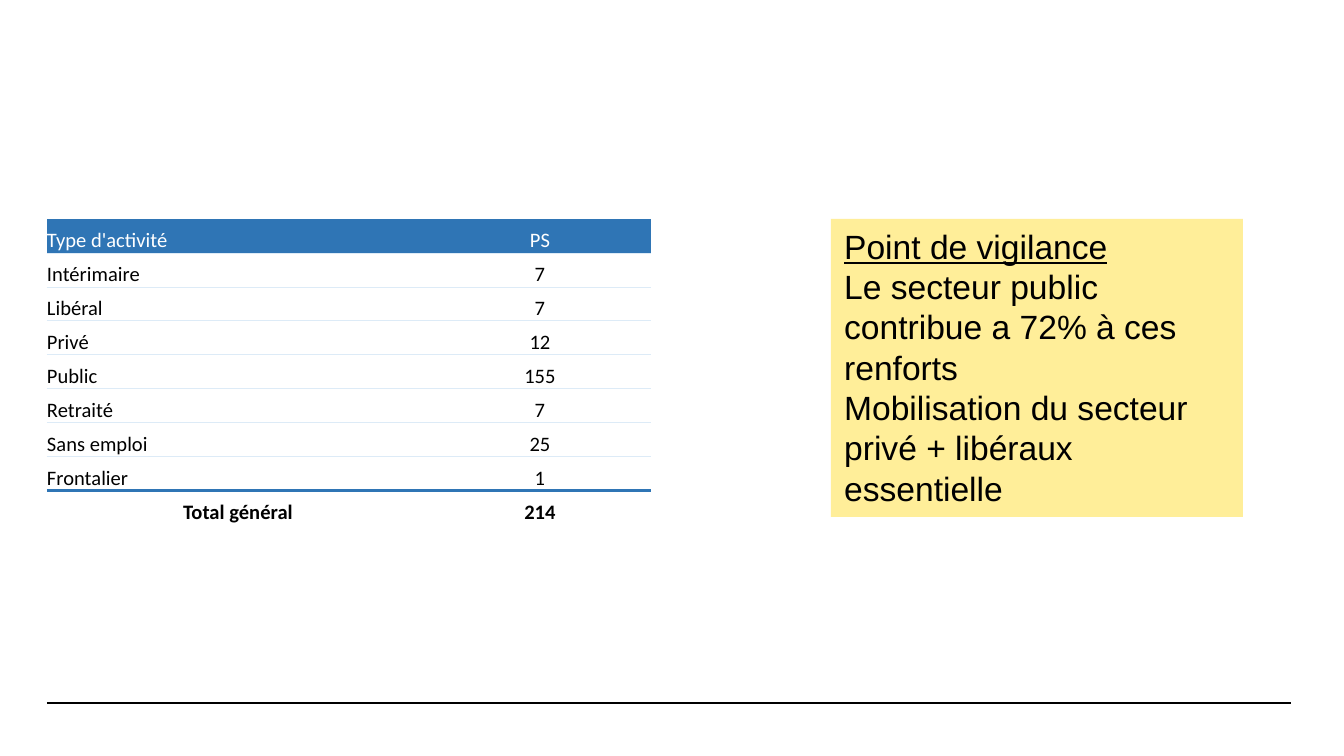
"""Build the slide on reinforcements by type of activity."""
from lxml.etree import SubElement as Sub
from pptx import Presentation
from pptx.dml.color import RGBColor
from pptx.enum.shapes import MSO_CONNECTOR as Conn, MSO_SHAPE as Shape
from pptx.enum.text import MSO_ANCHOR as Anchor, PP_ALIGN as Align
from pptx.oxml.ns import qn
from pptx.util import Pt

ROWS = [
    ("Type d'activité", "PS"),
    ("Intérimaire", "7"),
    ("Libéral", "7"),
    ("Privé", "12"),
    ("Public", "155"),
    ("Retraité", "7"),
    ("Sans emploi", "25"),
    ("Frontalier", "1"),
    ("Total général", "214"),
]
NOTE = [
    "Point de vigilance",
    "Le secteur public contribue a 72% à ces renforts",
    "Mobilisation du secteur privé + libéraux essentielle",
]
RULES = [(47, 1286), (52, 1291)]
COLS = (382, 222)
LEFT, TOP, HIGH = 47, 219, 34
BLACK, WHITE, BLUE, PALE, CREAM = "000000", "FFFFFF", "2F75B5", "DDEBF7", "FFEE99"
PLAIN = "{2D5ABB26-0587-4C30-8999-92F81FD0307C}"


def px(num):
    return round(num * 914400 / 134.4)


def tint(code):
    return RGBColor.from_string(code)


def write(para, text, size=11, face="Calibri", color=BLACK, bold=False,
          under=False, align=Align.LEFT):
    para.alignment = align
    run = para.add_run()
    run.text = text
    font = run.font
    font.size, font.name = Pt(size), face
    font.bold, font.underline = bold, under
    font.color.rgb = tint(color)


def edge(cell, side, color, width):
    line = Sub(cell._tc.get_or_add_tcPr(), qn(f"a:ln{side}"), w=str(Pt(width)))
    Sub(Sub(line, qn("a:solidFill")), qn("a:srgbClr"), val=color)


def add_rules(slide):
    for start, end in RULES:
        line = slide.shapes.add_connector(
            Conn.STRAIGHT, px(start), px(703), px(end), px(703))
        line.line.color.rgb = tint(BLACK)
        line.line.width = Pt(0.8)
        Sub(line._element.spPr, qn("a:effectLst"))


def add_note(slide):
    box = slide.shapes.add_shape(Shape.RECTANGLE, px(831), px(TOP), px(412), px(298))
    box.shadow.inherit = False
    box.fill.solid()
    box.fill.fore_color.rgb = tint(CREAM)
    box.line.fill.background()
    frame = box.text_frame
    frame.word_wrap = True
    frame.vertical_anchor = Anchor.TOP
    for i, text in enumerate(NOTE):
        para = frame.add_paragraph() if i else frame.paragraphs[0]
        write(para, text, size=18, face="Arial", under=i == 0)


def add_grid(slide):
    last = len(ROWS) - 1
    table = slide.shapes.add_table(len(ROWS), len(COLS), px(LEFT), px(TOP),
                                   px(sum(COLS)), px(HIGH * len(ROWS))).table
    table._tbl.tblPr.find(qn("a:tableStyleId")).text = PLAIN
    table.first_row = table.horz_banding = False
    for col, wide in zip(table.columns, COLS):
        col.width = px(wide)
    for i, row in enumerate(ROWS):
        table.rows[i].height = px(HIGH)
        for j, text in enumerate(row):
            cell = table.cell(i, j)
            cell.margin_left = cell.margin_right = 0
            cell.margin_top = cell.margin_bottom = 0
            cell.vertical_anchor = Anchor.BOTTOM
            if i:
                edge(cell, "T", *((BLUE, 2) if i == last else (PALE, 0.5)))
            if i < last:
                edge(cell, "B", *((BLUE, 2) if i == last - 1 else (PALE, 0.5)))
            if i:
                cell.fill.background()
            else:
                cell.fill.solid()
                cell.fill.fore_color.rgb = tint(BLUE)
            write(cell.text_frame.paragraphs[0], text,
                  color=BLACK if i else WHITE, bold=i == last,
                  align=Align.CENTER if j or i == last else Align.LEFT)


def main():
    deck = Presentation()
    deck.slide_width, deck.slide_height = px(1344), px(756)
    slide = deck.slides.add_slide(deck.slide_layouts[6])
    add_rules(slide)
    add_note(slide)
    add_grid(slide)
    deck.save("out.pptx")


if __name__ == "__main__":
    main()
